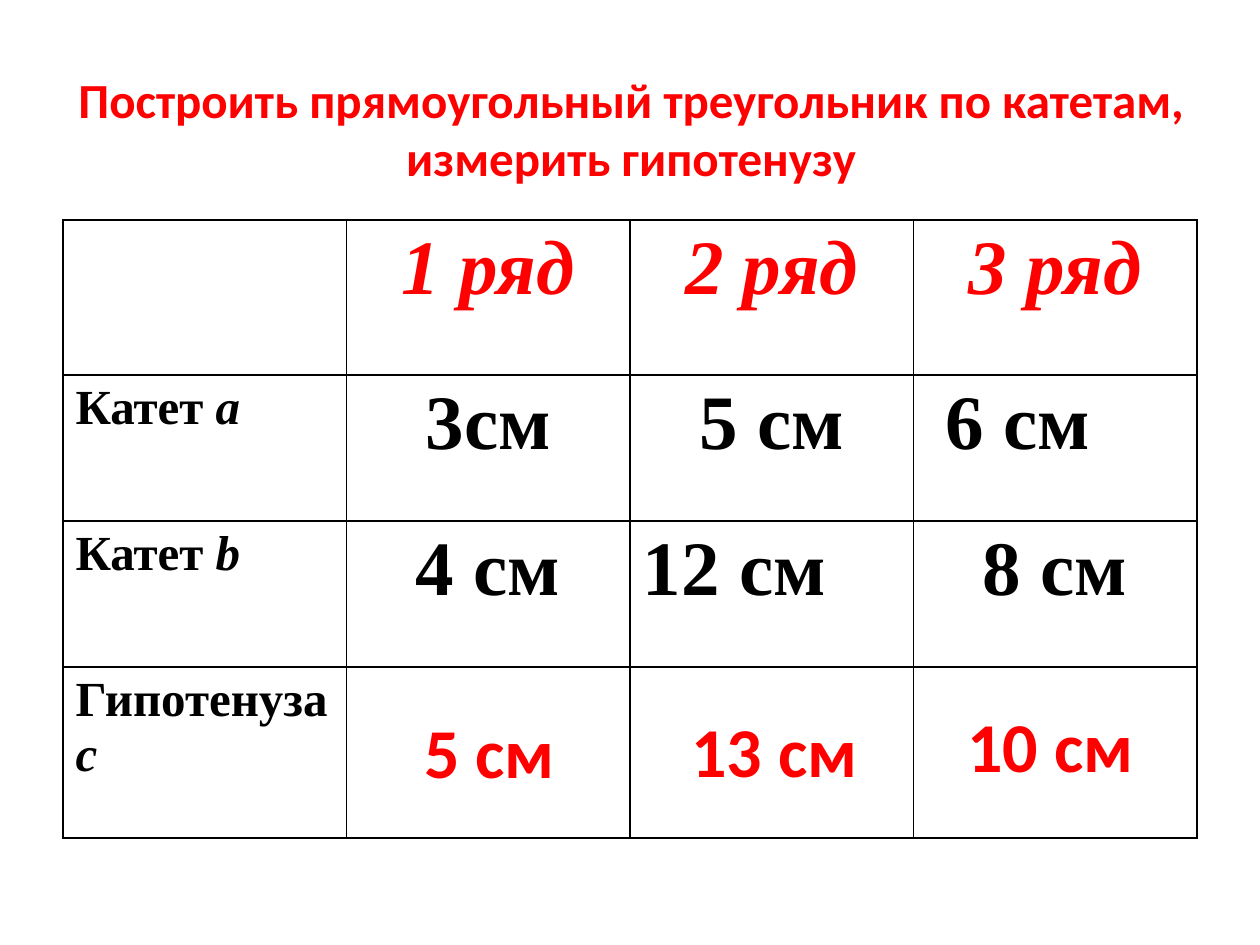
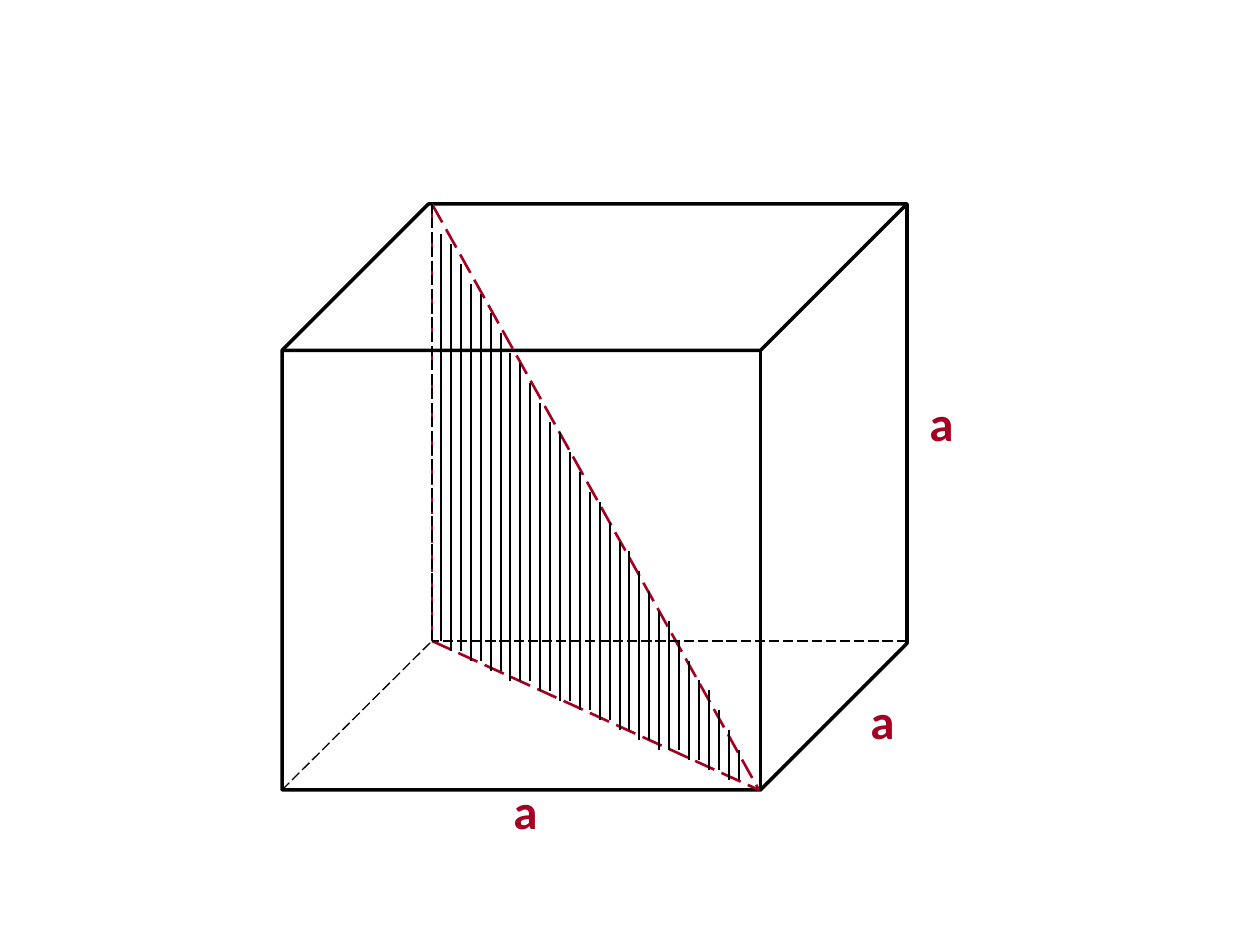
"""Builds two geometry slides: a task table and a cube with a shaded section."""
from lxml.etree import SubElement
from pptx import Presentation
from pptx.dml.color import RGBColor
from pptx.enum.dml import MSO_LINE
from pptx.enum.shapes import MSO_CONNECTOR, MSO_SHAPE
from pptx.enum.text import MSO_ANCHOR, MSO_AUTO_SIZE, PP_ALIGN
from pptx.oxml.ns import qn
from pptx.util import Emu, Pt

EMU_PER_PX = 914400 / 126
BLACK, RED, CRIMSON = "000000", "FF0000", "A50021"
SANS, SERIF = "Calibri", "Times New Roman"

ROW_HEIGHTS = (155, 146, 146, 171)
HEADINGS = ("", "1 ряд", "2 ряд", "3 ряд")
LEGS = (
    ("Катет ", "a", ("3см", "5 см", "6 см")),
    ("Катет ", "b", ("4 см", "12 см", "8 см")),
    ("Гипотенуза ", "с", ()),
)
LEFT_INDENTS = {"6 см": 32, "12 см": 13}
ANSWERS = (("5 см", 412, 702), ("13 см", 679, 701), ("10 см", 955, 696))

CUBE_LEFT, CUBE_TOP, CUBE_WIDTH, CUBE_HEIGHT = 282, 204, 625, 586
BACK_TOP, BACK_CORNER, FRONT_CORNER = (432, 204), (432, 641), (759, 790)
FRONT_LEFT, BACK_RIGHT = (282, 790), (907, 641)
SIDE_LABELS = ((858, 684), (501, 774), (917, 386))
HATCH_COUNT, HATCH_STEP = 31, 9.92


def px(length):
    """Turn pixels into EMU."""
    return Emu(round(length * EMU_PER_PX))


def colour(value):
    """Turn a hex string into a colour."""
    return RGBColor.from_string(value)


def add_span(para, text, size, shade, font=SANS, italic=False):
    """Add one bold run to a paragraph."""
    span = para.add_run()
    span.text = text
    span.font.name = font
    span.font.size = Pt(size)
    span.font.bold = True
    span.font.italic = italic
    span.font.color.rgb = colour(shade)


def add_text(page, text, left, top, width, height, size, shade, wrap=True):
    """Add a text box with one run and return it."""
    box = page.shapes.add_textbox(px(left), px(top), px(width), px(height))
    frame = box.text_frame
    frame.word_wrap = wrap
    frame.auto_size = MSO_AUTO_SIZE.SHAPE_TO_FIT_TEXT
    add_span(frame.paragraphs[0], text, size, shade)
    return box


def add_title(page, text):
    """Add the centred red title."""
    frame = add_text(page, text, 64, 35, 1134, 158, 28, RED).text_frame
    frame.auto_size = MSO_AUTO_SIZE.NONE
    frame.vertical_anchor = MSO_ANCHOR.BOTTOM
    frame.paragraphs[0].alignment = PP_ALIGN.CENTER


def add_line(page, start, end, shade=BLACK, weight=0.75, dash=None):
    """Add a straight line between two points."""
    ends = [px(value) for value in (*start, *end)]
    line = page.shapes.add_connector(MSO_CONNECTOR.STRAIGHT, *ends)
    line.line.color.rgb = colour(shade)
    line.line.width = Pt(weight)
    if dash:
        line.line.dash_style = dash
    SubElement(line._element.spPr, qn("a:effectLst"))


def style_cell(cell):
    """Give a cell thin black borders and no fill."""
    properties = cell._tc.get_or_add_tcPr()
    for side in ("a:lnL", "a:lnR", "a:lnT", "a:lnB"):
        border = SubElement(properties, qn(side), w=str(Pt(1)))
        fill = SubElement(border, qn("a:solidFill"))
        SubElement(fill, qn("a:srgbClr"), val=BLACK)
    cell.fill.background()


def fill_value(cell, text, shade=BLACK, italic=False):
    """Write a large value into a cell, centred unless it has an indent."""
    para = cell.text_frame.paragraphs[0]
    if text in LEFT_INDENTS:
        cell.margin_left = px(LEFT_INDENTS[text])
    else:
        para.alignment = PP_ALIGN.CENTER
    add_span(para, text, 44, shade, SERIF, italic)


def add_task_table(page):
    """Add the table of legs and hypotenuses."""
    frame = page.shapes.add_table(
        len(ROW_HEIGHTS), len(HEADINGS), px(63), px(220), px(1134), px(sum(ROW_HEIGHTS)))
    table = frame.table
    table.first_row = table.horz_banding = False
    for row, height in zip(table.rows, ROW_HEIGHTS):
        row.height = px(height)
    for cell in table.iter_cells():
        style_cell(cell)
    for column, heading in enumerate(HEADINGS):
        if heading:
            fill_value(table.cell(0, column), heading, RED, True)
    for row, (name, letter, values) in enumerate(LEGS, 1):
        para = table.cell(row, 0).text_frame.paragraphs[0]
        add_span(para, name, 28, BLACK, SERIF)
        add_span(para, letter, 28, BLACK, SERIF, True)
        for column, value in enumerate(values, 1):
            fill_value(table.cell(row, column), value)


def add_cube(page):
    """Add the outlined cube with its hidden edges."""
    cube = page.shapes.add_shape(
        MSO_SHAPE.CUBE, px(CUBE_LEFT), px(CUBE_TOP), px(CUBE_WIDTH), px(CUBE_HEIGHT))
    cube.adjustments[0] = 0.25
    cube.shadow.inherit = False
    cube.fill.background()
    cube.line.color.rgb = colour(BLACK)
    cube.line.width = Pt(2)
    section = (BACK_TOP, FRONT_CORNER), (BACK_TOP, BACK_CORNER), (BACK_CORNER, FRONT_CORNER)
    for start, end in section:
        add_line(page, start, end, CRIMSON, 1.5, MSO_LINE.LONG_DASH)
    for start in (BACK_TOP, BACK_RIGHT, FRONT_LEFT):
        add_line(page, start, BACK_CORNER, dash=MSO_LINE.LONG_DASH)


def add_hatching(page):
    """Shade the triangular section with lines snapped to a grid."""
    for index in range(HATCH_COUNT):
        share = index / (HATCH_COUNT - 1)
        left = round(441 + HATCH_STEP * index)
        top = round(234 + HATCH_STEP * int(52 * share))
        bottom = round(641 + HATCH_STEP * int(14 * share + 0.79))
        add_line(page, (left, top), (left, bottom))


def main():
    """Build and save the deck."""
    deck = Presentation()
    deck.slide_width, deck.slide_height = px(1260), px(945)
    blank = deck.slide_layouts[6]

    page = deck.slides.add_slide(blank)
    add_title(page, "Построить прямоугольный треугольник по катетам, измерить гипотенузу")
    add_task_table(page)
    for text, left, top in ANSWERS:
        add_text(page, text, left, top, 197, 97, 40, RED)

    page = deck.slides.add_slide(blank)
    add_cube(page)
    for left, top in SIDE_LABELS:
        add_text(page, "а", left, top, 50, 72, 28, CRIMSON, wrap=False)
    add_hatching(page)
    deck.save("out.pptx")


if __name__ == "__main__":
    main()
